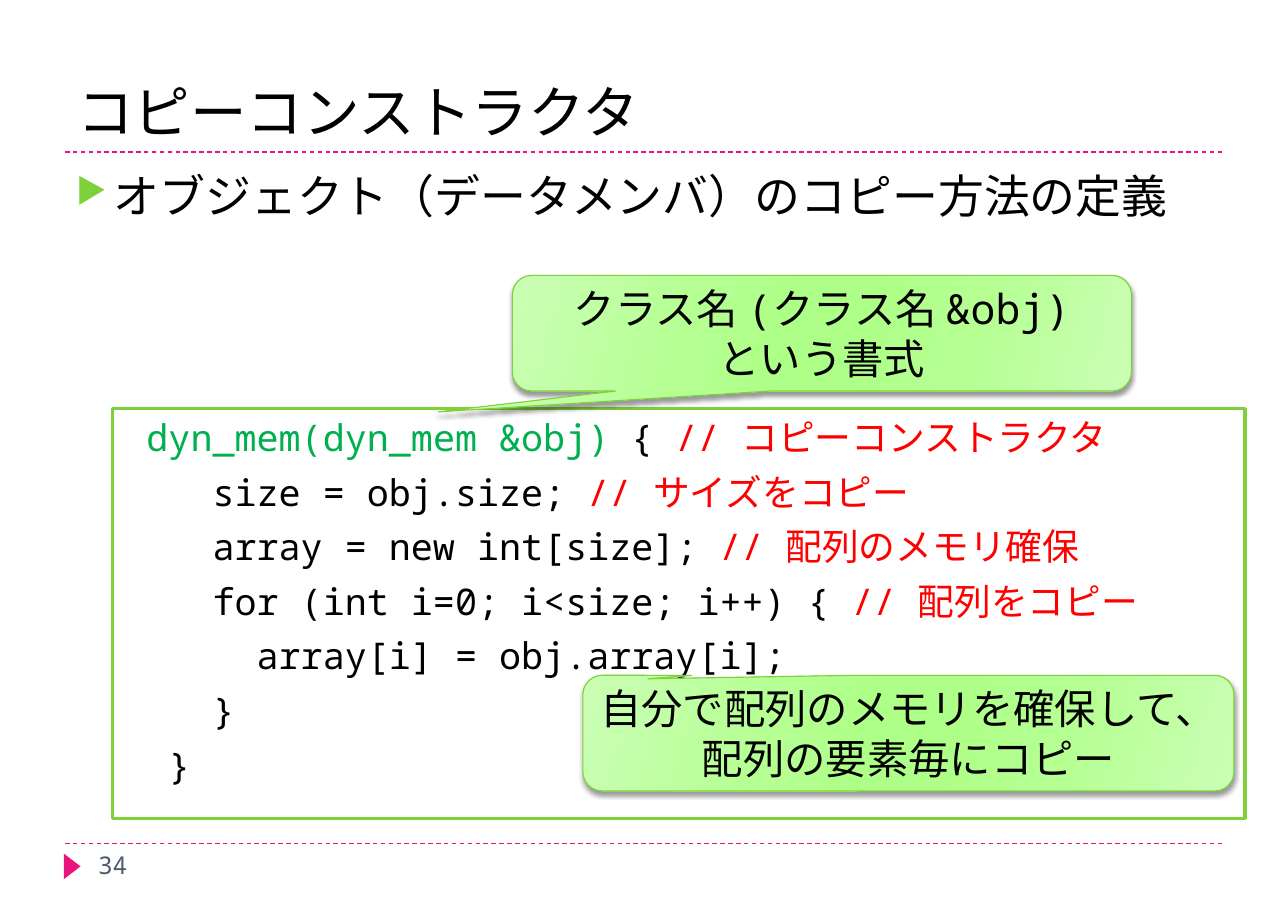
from dataclasses import dataclass

from lxml.etree import SubElement
from pptx import Presentation
from pptx.dml.color import RGBColor
from pptx.enum.dml import MSO_LINE_DASH_STYLE as Dash
from pptx.enum.lang import MSO_LANGUAGE_ID as Language
from pptx.enum.shapes import MSO_CONNECTOR as Connector, MSO_SHAPE as Preset
from pptx.enum.text import MSO_ANCHOR as Anchor, PP_ALIGN as Align
from pptx.oxml.ns import qn
from pptx.shapes.autoshape import Shape
from pptx.slide import Slide
from pptx.text.text import Font, TextFrame, _Paragraph as Paragraph
from pptx.util import Pt


@dataclass(frozen=True)
class Theme:
    """Colours, fonts and type sizes of the slide."""
    black: str = "000000"
    pink: str = "EA157A"
    green: str = "7FD13B"
    slate: str = "4E5B6F"
    signature: str = "00B050"
    comment: str = "FF0000"
    glow: tuple[tuple[int, str], ...] = (
        (0, "CBFEB5"), (30, "B5FF93"), (45, "AEFF87"),
        (55, "AEFF87"), (73, "B5FF93"), (100, "CBFEB5"))
    title_font: str = "Roboto"
    font: str = "Noto Sans Mono"
    title_size: float = 37
    body_size: float = 30
    callout_size: float = 27
    code_size: float = 24
    number_size: float = 16
    space_before: float = 6.9


@dataclass(frozen=True)
class Area:
    """A rectangle in points."""
    left: float
    top: float
    width: float
    height: float

    def lengths(self) -> tuple[Pt, Pt, Pt, Pt]:
        """Return the four values as lengths."""
        return Pt(self.left), Pt(self.top), Pt(self.width), Pt(self.height)


@dataclass(frozen=True)
class CodeLine:
    """A line of code: indent in characters and coloured pieces."""
    indent: int
    pieces: tuple[tuple[str, str], ...]


@dataclass(frozen=True)
class Callout:
    """A speech balloon with its pointer offsets."""
    area: Area
    pointer: tuple[float, float]
    text: str


THEME = Theme()
RULES = (99.4, 551.5)
CODE = (
    CodeLine(1, (("dyn_mem(dyn_mem &obj) ", THEME.signature), ("{ ", THEME.black),
                 ("// コピーコンストラクタ", THEME.comment))),
    CodeLine(4, (("size = obj.size; ", THEME.black), ("// サイズをコピー", THEME.comment))),
    CodeLine(4, (("array = new int[size]; ", THEME.black),
                 ("// 配列のメモリ確保", THEME.comment))),
    CodeLine(4, (("for (int i=0; i<size; i++) { ", THEME.black),
                 ("// 配列をコピー", THEME.comment))),
    CodeLine(6, (("array[i] = obj.array[i];", THEME.black),)),
    CodeLine(4, (("}", THEME.black),)),
    CodeLine(2, (("}", THEME.black),)),
)
CALLOUTS = (
    Callout(Area(334.8, 180, 404.6, 75.6), (-0.62, 0.68), "クラス名 (クラス名 &obj)\nという書式"),
    Callout(Area(380.9, 441.4, 425.5, 75.6), (-0.4, -0.47),
            "自分で配列のメモリを確保して、\n配列の要素毎にコピー"),
)


def style_font(font: Font, size: float, color: str, name: str = THEME.font) -> None:
    """Set typeface, size, colour and language."""
    font.name, font.size = name, Pt(size)
    font.color.rgb = RGBColor.from_string(color)
    font.language_id = Language.JAPANESE


def set_insets(frame: TextFrame) -> None:
    """Apply the common text margins and wrapping."""
    frame.word_wrap = True
    frame.margin_left = frame.margin_right = Pt(7.9)
    frame.margin_top = frame.margin_bottom = Pt(4)


def add_text(page: Slide, area: Area, text: str, size: float, color: str,
             name: str = THEME.font, anchor: Anchor = Anchor.TOP) -> Paragraph:
    """Add a one-paragraph text box and return its paragraph."""
    frame = page.shapes.add_textbox(*area.lengths()).text_frame
    set_insets(frame)
    frame.vertical_anchor = anchor
    frame.text = text
    para = frame.paragraphs[0]
    style_font(para.runs[0].font, size, color, name)
    return para


def add_bullet(para: Paragraph) -> None:
    """Give a paragraph the green triangle bullet with a hanging indent."""
    para.space_before = Pt(THEME.space_before)
    props = para._p.get_or_add_pPr()
    props.set("marL", str(Pt(24.5)))
    props.set("indent", str(-Pt(24.5)))
    color = SubElement(props, qn("a:buClr"))
    SubElement(color, qn("a:srgbClr"), val=THEME.green)
    SubElement(props, qn("a:buSzPct"), val="76000")
    SubElement(props, qn("a:buChar"), char="▶")


def add_rule(page: Slide, height: float) -> None:
    """Draw a dashed line across the page."""
    rule = page.shapes.add_connector(
        Connector.STRAIGHT, Pt(42.5), Pt(height), Pt(799.9), Pt(height))
    rule.line.color.rgb = RGBColor.from_string(THEME.pink)
    rule.line.width = Pt(0.75)
    rule.line.dash_style = Dash.DASH
    SubElement(rule.element.spPr, qn("a:effectLst"))


def add_outlined(page: Slide, preset: Preset, area: Area, width: float) -> Shape:
    """Add a green-outlined shape without a shadow."""
    shape = page.shapes.add_shape(preset, *area.lengths())
    shape.shadow.inherit = False
    shape.line.color.rgb = RGBColor.from_string(THEME.green)
    shape.line.width = Pt(width)
    return shape


def add_marker(page: Slide) -> None:
    """Draw the pink triangle beside the page number."""
    marker = page.shapes.add_shape(
        Preset.ISOSCELES_TRIANGLE, *Area(38.9, 560.9, 16.6, 10.8).lengths())
    marker.shadow.inherit = False
    marker.rotation = 90
    marker.fill.solid()
    marker.fill.fore_color.rgb = RGBColor.from_string(THEME.pink)
    marker.line.fill.background()


def add_code(page: Slide) -> None:
    """Draw the framed code listing."""
    box = add_outlined(page, Preset.RECTANGLE, Area(73.4, 267.1, 740.2, 267.8), 2.25)
    box.fill.background()
    frame = box.text_frame
    set_insets(frame)
    frame.vertical_anchor = Anchor.TOP
    for index, line in enumerate(CODE):
        para = frame.add_paragraph() if index else frame.paragraphs[0]
        para.alignment = Align.LEFT
        para.space_before = Pt(THEME.space_before)
        indent = Pt(line.indent * THEME.code_size * 0.6)
        para._p.get_or_add_pPr().set("marL", str(indent))
        for text, color in line.pieces:
            span = para.add_run()
            span.text = text
            style_font(span.font, THEME.code_size, color)


def add_callout(page: Slide, callout: Callout) -> None:
    """Draw a glowing balloon with a soft shadow."""
    box = add_outlined(page, Preset.ROUNDED_RECTANGULAR_CALLOUT, callout.area, 0.75)
    box.adjustments[0], box.adjustments[1] = callout.pointer
    box.fill.gradient()
    box.fill.gradient_angle = 344
    stops = box.element.spPr.find(qn("a:gradFill")).find(qn("a:gsLst"))
    for stop in list(stops):
        stops.remove(stop)
    for position, color in THEME.glow:
        stop = SubElement(stops, qn("a:gs"), pos=str(position * 1000))
        SubElement(stop, qn("a:srgbClr"), val=color)
    effects = box.element.spPr.find(qn("a:effectLst"))
    shadow = SubElement(effects, qn("a:outerShdw"), blurRad=str(Pt(3)),
                        dist=str(Pt(2)), dir="5400000", rotWithShape="0")
    shade = SubElement(shadow, qn("a:srgbClr"), val=THEME.black)
    SubElement(shade, qn("a:alpha"), val="40000")
    frame = box.text_frame
    frame.text = callout.text
    frame.vertical_anchor = Anchor.MIDDLE
    for para in frame.paragraphs:
        para.alignment = Align.CENTER
        style_font(para.runs[0].font, THEME.callout_size, THEME.black)


def main() -> None:
    """Build and save the slide."""
    deck = Presentation()
    deck.slide_width, deck.slide_height = Pt(841.68), Pt(595.44)
    page = deck.slides.add_slide(deck.slide_layouts[6])
    for height in RULES:
        add_rule(page, height)
    add_marker(page)
    add_text(page, Area(42.5, 13, 757.4, 85.7), "コピーコンストラクタ",
             THEME.title_size, THEME.black, THEME.title_font, Anchor.BOTTOM)
    add_bullet(add_text(page, Area(41.8, 105.8, 758.2, 428.4),
                        "オブジェクト（データメンバ）のコピー方法の定義",
                        THEME.body_size, THEME.black))
    add_text(page, Area(56.2, 551.5, 182.2, 31.7), "34", THEME.number_size, THEME.slate)
    add_code(page)
    for callout in CALLOUTS:
        add_callout(page, callout)
    deck.save("out.pptx")


if __name__ == "__main__":
    main()
